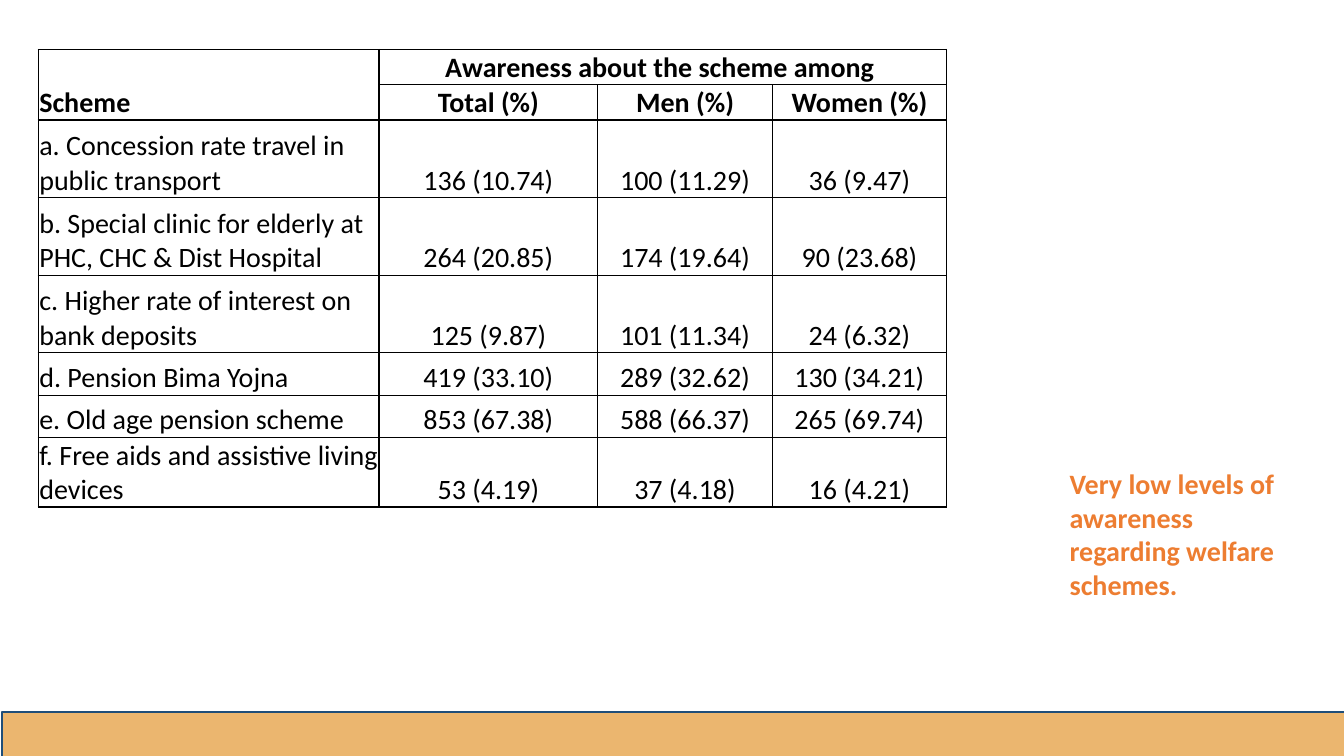
from lxml import etree
from pptx import Presentation
from pptx.dml.color import RGBColor
from pptx.enum.shapes import MSO_SHAPE
from pptx.enum.text import MSO_ANCHOR, PP_ALIGN
from pptx.oxml.ns import qn
from pptx.util import Inches, Pt

RECT = MSO_SHAPE.RECTANGLE
BOTTOM = MSO_ANCHOR.BOTTOM
LEFT, CENTER = PP_ALIGN.LEFT, PP_ALIGN.CENTER

WIDTHS = [3.38, 2.17, 1.73, 1.73]
HEIGHTS = [0.31, 0.31, 0.77, 0.77, 0.77, 0.42, 0.42, 0.62]
ROWS = [
    ["Scheme", "Awareness about the scheme among ", "", ""],
    ["", "Total (%)", "Men (%)", "Women (%)"],
    ["a. Concession rate travel in public transport",
     "136 (10.74)", "100 (11.29)", "36 (9.47)"],
    ["b. Special clinic for elderly at PHC, CHC & Dist Hospital",
     "264 (20.85)", "174 (19.64)", "90 (23.68)"],
    ["c. Higher rate of interest on bank deposits",
     "125 (9.87)", "101 (11.34)", "24 (6.32)"],
    ["d. Pension Bima Yojna", "419 (33.10)", "289 (32.62)", "130 (34.21)"],
    ["e. Old age pension scheme", "853 (67.38)", "588 (66.37)", "265 (69.74)"],
    ["f. Free aids and assistive living devices",
     "53 (4.19)", "37 (4.18)", "16 (4.21)"],
]


def color(code):
    return RGBColor.from_string(code)


def write(frame, text, code, bold, align):
    para = frame.paragraphs[0]
    para.alignment = align
    run = para.add_run()
    run.text = text
    run.font.name = "Calibri"
    run.font.size = Pt(20)
    run.font.bold = bold
    run.font.color.rgb = color(code)


deck = Presentation()
deck.slide_width, deck.slide_height = Inches(13.33), Inches(7.5)
slide = deck.slides.add_slide(deck.slide_layouts[6])

# Awareness table
table = slide.shapes.add_table(
    len(ROWS), len(WIDTHS), Inches(0.38), Inches(0.49),
    Inches(sum(WIDTHS)), Inches(sum(HEIGHTS))).table
table.first_row = table.horz_banding = False
for col, width in zip(table.columns, WIDTHS):
    col.width = Inches(width)
for row, height in zip(table.rows, HEIGHTS):
    row.height = Inches(height)

for r, row in enumerate(ROWS):
    for c, text in enumerate(row):
        cell = table.cell(r, c)
        cell.margin_left = cell.margin_right = cell.margin_top = Inches(0.01)
        cell.margin_bottom = 0
        cell.vertical_anchor = BOTTOM
        props = cell._tc.get_or_add_tcPr()
        for side in ("a:lnL", "a:lnR", "a:lnT", "a:lnB"):
            edge = etree.SubElement(props, qn(side), w=str(Pt(1)))
            fill = etree.SubElement(edge, qn("a:solidFill"))
            etree.SubElement(fill, qn("a:srgbClr"), val="000000")
        cell.fill.background()
        if text:
            write(cell.text_frame, text, "000000", r < 2, CENTER if c else LEFT)
table.cell(0, 0).merge(table.cell(1, 0))
table.cell(0, 1).merge(table.cell(0, 3))

# Takeaway
note = slide.shapes.add_textbox(
    Inches(10.51), Inches(4.58), Inches(2.32), Inches(1.45)).text_frame
note.word_wrap = True
write(note, "Very low levels of awareness regarding welfare schemes.",
      "ED7D31", True, LEFT)

# Footer band
band = slide.shapes.add_shape(
    RECT, Inches(0.02), Inches(7.06), Inches(13.36), Inches(0.52))
band.shadow.inherit = False
band.fill.solid()
band.fill.fore_color.rgb = color("EBB66F")
band.line.color.rgb = color("1F4E79")
band.line.width = Pt(1.5)

deck.save("out.pptx")
